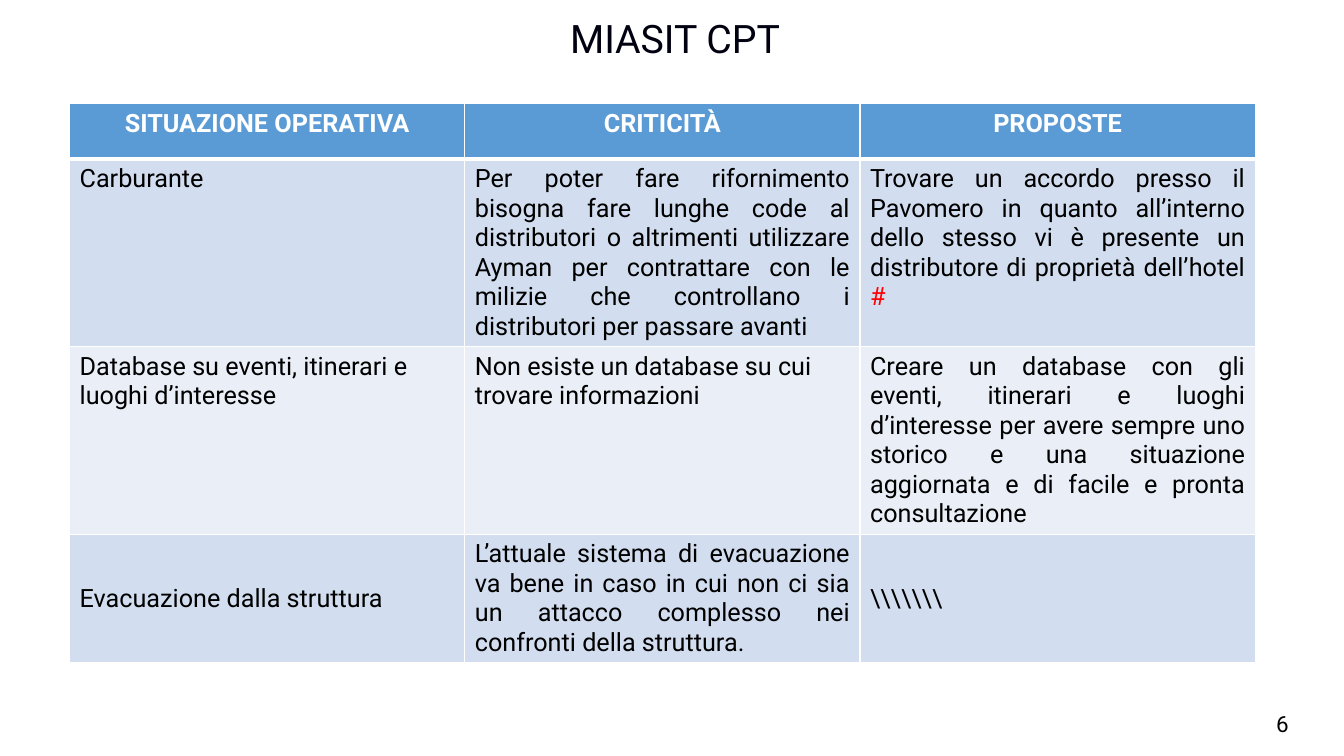
from dataclasses import dataclass

from lxml.etree import SubElement
from pptx import Presentation
from pptx.dml.color import RGBColor
from pptx.enum.text import MSO_ANCHOR, MSO_AUTO_SIZE, PP_ALIGN
from pptx.oxml.ns import qn
from pptx.util import Inches, Pt


@dataclass(frozen=True)
class Theme:
    font: str = "Roboto"
    title: str = "000010"
    ink: str = "000000"
    white: str = "FFFFFF"
    red: str = "FF0000"
    head: str = "5B9BD5"
    bands: tuple = ("EAEFF7", "D2DEEF")
    title_size: int = 28
    cell_size: int = 18
    page_size: int = 16


theme = Theme()


def add_run(para, text, size, color, bold=False):
    run = para.add_run()
    run.text = text
    run.font.name = theme.font
    run.font.size = Pt(size)
    run.font.bold = bold
    run.font.color.rgb = RGBColor.from_string(color)


def add_edge(cell, side, width):
    """Draw one white cell border; call before the cell gets its fill."""
    line = SubElement(cell._tc.get_or_add_tcPr(), qn("a:ln" + side), w=str(Pt(width)))
    fill = SubElement(line, qn("a:solidFill"))
    SubElement(fill, qn("a:srgbClr"), val=theme.white)


deck = Presentation()
deck.slide_width = Inches(13.33)
deck.slide_height = Inches(7.5)
slide = deck.slides.add_slide(deck.slide_layouts[5])

# Title
title = slide.shapes.title
title.left, title.top = Inches(0.94), Inches(0.18)
title.width, title.height = Inches(11.51), Inches(0.48)
frame = title.text_frame
frame.auto_size = MSO_AUTO_SIZE.NONE
frame.vertical_anchor = MSO_ANCHOR.MIDDLE
para = frame.paragraphs[0]
para.alignment = PP_ALIGN.CENTER
para.line_spacing = 0.8
add_run(para, "MIASIT CPT", theme.title_size, theme.title)

# Table: each cell is its alignment and its text
left, mid, just = PP_ALIGN.LEFT, PP_ALIGN.CENTER, PP_ALIGN.JUSTIFY
rows = [
    [(mid, "SITUAZIONE OPERATIVA"), (mid, "CRITICITÀ"), (mid, "PROPOSTE")],
    [
        (left, "Carburante"),
        (just, "Per poter fare rifornimento bisogna fare lunghe code al distributori "
               "o altrimenti utilizzare Ayman per contrattare con le milizie che "
               "controllano i distributori per passare avanti"),
        (just, "Trovare un accordo presso il Pavomero in quanto all’interno dello stesso "
               "vi è presente un distributore di proprietà dell’hotel "),
    ],
    [
        (left, "Database su eventi, itinerari e luoghi d’interesse"),
        (left, "Non esiste un database su cui trovare informazioni"),
        (just, "Creare un database con gli eventi, itinerari e luoghi d’interesse per "
               "avere sempre uno storico e una situazione aggiornata e di facile e "
               "pronta consultazione"),
    ],
    [
        (left, "Evacuazione dalla struttura"),
        (just, "L’attuale sistema di evacuazione va bene in caso in cui non ci sia un "
               "attacco complesso nei confronti della struttura."),
        (left, "\\" * 7),
    ],
]
heights = [0.55, 1.85, 1.85, 1.27]
table = slide.shapes.add_table(
    len(rows), 3, Inches(0.69), Inches(1.03), Inches(11.76), Inches(sum(heights))
).table
for col in table.columns:
    col.width = Inches(3.92)

for r, (row, height) in enumerate(zip(rows, heights)):
    table.rows[r].height = Inches(height)
    is_head = r == 0
    for c, (align, text) in enumerate(row):
        cell = table.cell(r, c)
        add_edge(cell, "L", 1)
        add_edge(cell, "R", 1)
        add_edge(cell, "T", 3 if r == 1 else 1)
        add_edge(cell, "B", 3 if is_head else 1)
        cell.fill.solid()
        shade = theme.head if is_head else theme.bands[r % 2]
        cell.fill.fore_color.rgb = RGBColor.from_string(shade)
        last = r == len(rows) - 1
        cell.vertical_anchor = MSO_ANCHOR.MIDDLE if last else MSO_ANCHOR.TOP
        para = cell.text_frame.paragraphs[0]
        para.alignment = align
        color = theme.white if is_head else theme.ink
        add_run(para, text, theme.cell_size, color, is_head)

add_run(table.cell(1, 2).text_frame.paragraphs[0], "#", theme.cell_size, theme.red)

# Page number
page = slide.shapes.add_textbox(Inches(12.33), Inches(6.98), Inches(0.78), Inches(0.4))
page.text_frame.word_wrap = True
page.text_frame.vertical_anchor = MSO_ANCHOR.MIDDLE
para = page.text_frame.paragraphs[0]
para.alignment = PP_ALIGN.CENTER
add_run(para, "6", theme.page_size, theme.ink)

deck.save("out.pptx")
